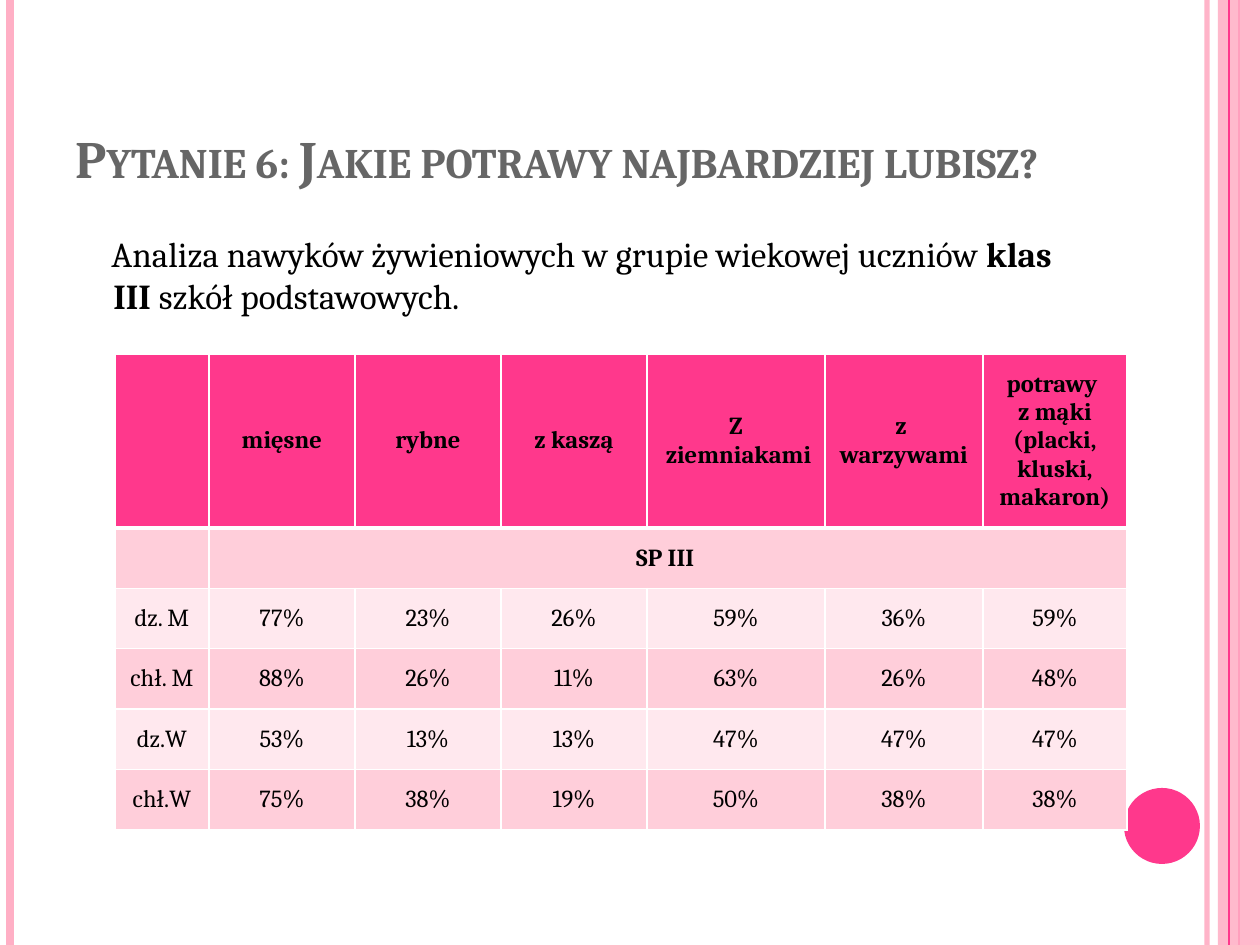
import dataclasses

import lxml.etree
import pptx
import pptx.dml.color
import pptx.enum.shapes
import pptx.enum.text
import pptx.oxml.ns
import pptx.util

SCALE = 914400 / 126
WIDTH, HEIGHT = 1260, 945
ALIGN = pptx.enum.text.PP_ALIGN
ANCHOR = pptx.enum.text.MSO_ANCHOR
SHAPE = pptx.enum.shapes.MSO_SHAPE
qn = pptx.oxml.ns.qn


@dataclasses.dataclass(frozen=True)
class Theme:
    """Colours, font and type sizes of the slide."""

    accent: str = "FF388C"
    pale: str = "FFAFC5"
    band_dark: str = "FFCEDA"
    band_light: str = "FFE8EE"
    white: str = "FFFFFF"
    title: str = "666666"
    ink: str = "000000"
    font: str = "Cambria"
    title_size: int = 30
    body_size: int = 20
    cell_size: int = 14


THEME = Theme()

HEADERS = ["", "mięsne", "rybne", "z kaszą", "Z\n ziemniakami", "z \nwarzywami",
           "potrawy \nz mąki\n(placki, kluski, makaron)"]
GROUP = "SP III "
ROWS = [
    ("dz. M", 77, 23, 26, 59, 36, 59),
    ("chł. M", 88, 26, 11, 63, 26, 48),
    ("dz.W", 53, 13, 13, 47, 47, 47),
    ("chł.W", 75, 38, 19, 50, 38, 38),
]
COLUMNS = [94, 146, 146, 146, 178, 158, 144]
HEADER_HEIGHT = 174


def px(n):
    """Turn pixels into EMU."""
    return pptx.util.Emu(round(n * SCALE))


def rgb(value):
    """Turn a hex string into a colour."""
    return pptx.dml.color.RGBColor.from_string(value)


def paint(fill, color, alpha=100):
    """Fill solidly, with an opacity in percent."""
    fill.solid()
    fill.fore_color.rgb = rgb(color)
    if alpha < 100:
        clr = fill._xPr.find(qn("a:solidFill"))[0]
        lxml.etree.SubElement(clr, qn("a:alpha"), val=str(alpha * 1000))


def add_text(p, text, size=THEME.body_size, color=THEME.ink, bold=False, small_caps=False):
    """Add text to a paragraph, with a line break at each newline."""
    for i, line in enumerate(text.split("\n")):
        if i:
            p.add_line_break()
        r = p.add_run()
        r.text = line
        r.font.name = THEME.font
        r.font.size = pptx.util.Pt(size)
        r.font.bold = bold
        r.font.color.rgb = rgb(color)
        if small_caps:
            r.font._element.set("cap", "small")


def add_frame(slide, x, y, w, h, anchor):
    """Add a wrapping text box and return its text frame."""
    tf = slide.shapes.add_textbox(px(x), px(y), px(w), px(h)).text_frame
    tf.word_wrap = True
    tf.vertical_anchor = anchor
    return tf


def add_rule(slide, x, y, h, width, color, alpha=100):
    """Add a vertical line."""
    line = slide.shapes.add_connector(
        pptx.enum.shapes.MSO_CONNECTOR.STRAIGHT, px(x), px(y), px(x), px(y + h))
    line.line.width = pptx.util.Pt(width)
    paint(line.line.fill, color, alpha)
    lxml.etree.SubElement(line._element.spPr, qn("a:effectLst"))


def add_block(slide, kind, x, y, w, h, color, alpha=100):
    """Add a filled shape without an outline."""
    sp = slide.shapes.add_shape(kind, px(x), px(y), px(w), px(h))
    sp.shadow.inherit = False
    sp.line.fill.background()
    paint(sp.fill, color, alpha)


def add_decoration(slide, x, y, w, h):
    """Draw the side stripes and the dot."""
    right = x + w
    add_rule(slide, right - 53, y, h, 3, THEME.pale, 93)
    add_rule(slide, x + 10, y, h, 4.5, THEME.pale)
    add_rule(slide, right - 21, y, h, 1.5, THEME.accent)
    add_block(slide, SHAPE.RECTANGLE, right - 42, y, 42, h, THEME.pale, 87)
    add_rule(slide, right - 31, y, h, 0.75, THEME.accent)
    add_block(slide, SHAPE.OVAL, right - 136, y + h - 157, 76, 76, THEME.accent)


def add_title(slide, x, y, w, h):
    """Add the question."""
    p = add_frame(slide, x, y, w, h, ANCHOR.BOTTOM).paragraphs[0]
    add_text(p, "Pytanie 6: Jakie potrawy najbardziej lubisz?",
             size=THEME.title_size, color=THEME.title, bold=True, small_caps=True)


def add_intro(slide, x, y, w, h):
    """Add the sentence above the table."""
    tf = add_frame(slide, x, y, w, h, ANCHOR.TOP)
    tf.margin_top = px(11)
    p = tf.paragraphs[0]
    p._p.get_or_add_pPr().set("marL", str(px(38)))
    p._p.pPr.set("indent", str(px(-2)))
    add_text(p, "Analiza nawyków żywieniowych w grupie wiekowej uczniów ")
    add_text(p, "klas III ", bold=True)
    add_text(p, "szkół podstawowych.")


def style_cell(cell, fill, top=1, bottom=1):
    """Set the fill, borders, margins and anchor of a cell."""
    cell.margin_left = cell.margin_right = cell.margin_top = cell.margin_bottom = 0
    cell.vertical_anchor = ANCHOR.MIDDLE
    paint(cell.fill, fill)
    borders = {"lnL": 1, "lnR": 1, "lnT": top, "lnB": bottom}
    for i, (tag, width) in enumerate(borders.items()):
        ln = lxml.etree.Element(qn("a:" + tag), w=str(pptx.util.Pt(width)))
        solid = lxml.etree.SubElement(ln, qn("a:solidFill"))
        lxml.etree.SubElement(solid, qn("a:srgbClr"), val=THEME.white)
        cell._tc.tcPr.insert(i, ln)


def add_results(slide, x, y, w, h):
    """Add the table of favourite dishes."""
    group = ["", GROUP] + [""] * (len(COLUMNS) - 2)
    data = [HEADERS, group] + [[name] + [f"{v}%" for v in values] for name, *values in ROWS]
    table = slide.shapes.add_table(
        len(data), len(COLUMNS), px(x), px(y), px(w), px(h)).table
    table.first_row = table.horz_banding = False
    for column, width in zip(table.columns, COLUMNS):
        column.width = px(width)
    for i, texts in enumerate(data):
        row_height = HEADER_HEIGHT if i == 0 else (h - HEADER_HEIGHT) / (len(data) - 1)
        table.rows[i].height = px(row_height)
        band = THEME.band_dark if i % 2 else THEME.band_light
        for j, text in enumerate(texts):
            cell = table.cell(i, j)
            style_cell(cell, THEME.accent if i == 0 else band,
                       top=3 if i == 1 else 1, bottom=3 if i == 0 else 1)
            if text:
                p = cell.text_frame.paragraphs[0]
                p.alignment = ALIGN.CENTER
                add_text(p, text, size=THEME.cell_size, bold=i < 2)
    table.cell(1, 1).merge(table.cell(1, len(COLUMNS) - 1))


def main():
    """Build and save the slide."""
    prs = pptx.Presentation()
    prs.slide_width, prs.slide_height = px(WIDTH), px(HEIGHT)
    slide = prs.slides.add_slide(prs.slide_layouts[6])
    add_decoration(slide, 0, 0, WIDTH, HEIGHT)
    add_title(slide, 63, 38, 1029, 157)
    add_intro(slide, 63, 221, 1029, 672)
    add_results(slide, 115, 354, sum(COLUMNS), 476)
    prs.save("out.pptx")


if __name__ == "__main__":
    main()
